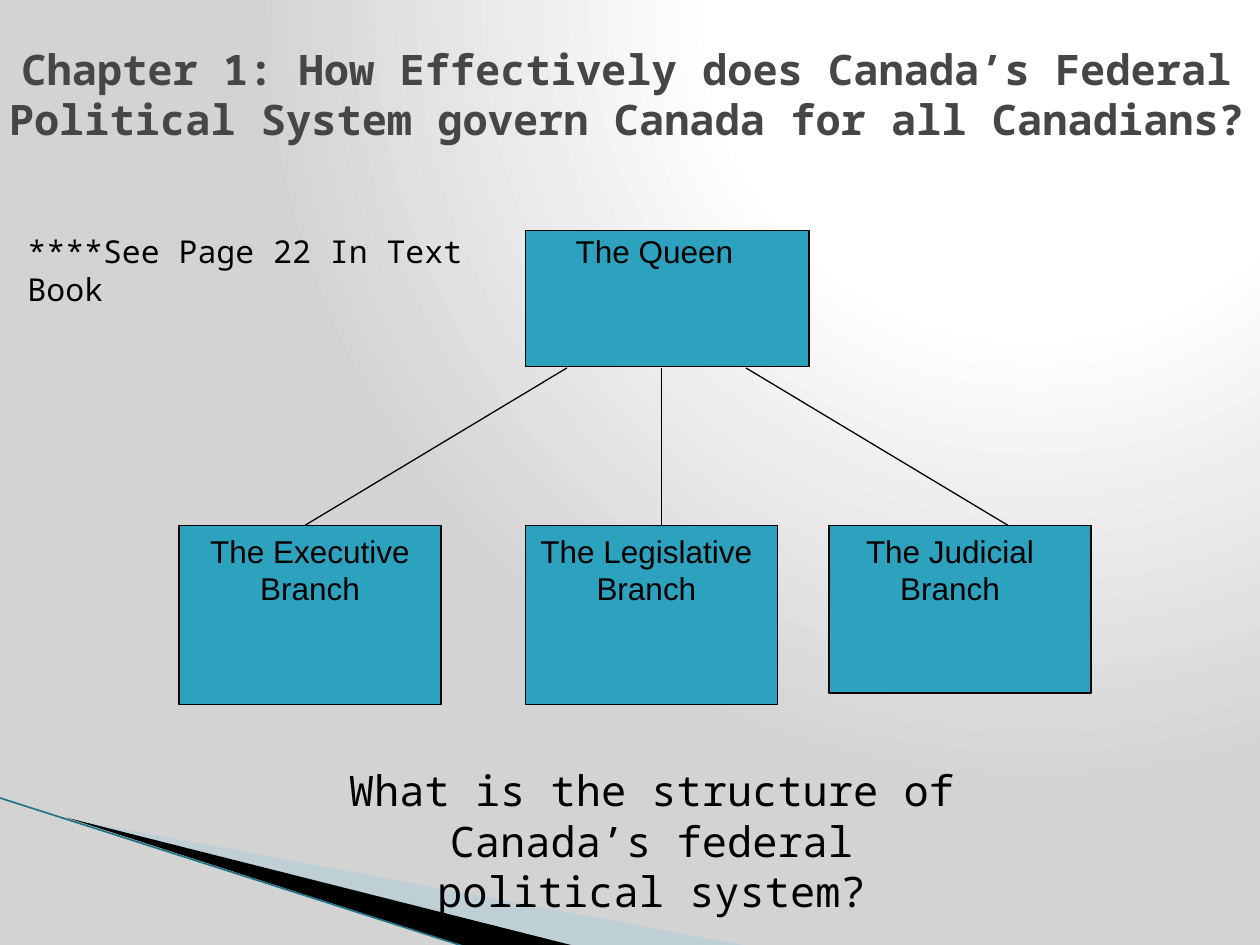
from lxml.etree import SubElement
from pptx import Presentation
from pptx.dml.color import RGBColor
from pptx.enum.shapes import MSO_CONNECTOR, MSO_SHAPE
from pptx.enum.text import MSO_ANCHOR, MSO_AUTO_SIZE, PP_ALIGN
from pptx.oxml import parse_xml
from pptx.oxml.ns import nsdecls, qn
from pptx.util import Inches, Pt

BLACK = RGBColor(0x00, 0x00, 0x00)
TEAL = RGBColor(0x2D, 0xA2, 0xBF)
DARK_TEAL = RGBColor(0x1F, 0x74, 0x88)
PALE_BLUE = RGBColor(0xA0, 0xCB, 0xDC)
TITLE_GREY = RGBColor(0x46, 0x46, 0x46)
MONO, SANS = "Noto Sans Mono", "Arial"

TITLE = ("Chapter 1: How Effectively does Canada’s Federal Political System "
         "govern Canada for all Canadians?")
TITLE_AREA = (-0.06, 0.36, 10.06, 0.77)

SWOOSHES = [
    ([(0.55, 6.5), (5.95, 7.51), (4.56, 7.51)], PALE_BLUE, 40),
    ([(0.53, 6.49), (4.57, 7.51), (3.72, 7.52)], BLACK, 100),
]
SWOOSH_EDGE = ((-0.01, 6.33), (3.71, 7.52))

BRANCH_LINES = [
    ((5.25, 2.92), (5.25, 4.25)),
    ((4.5, 2.92), (2.42, 4.17)),
    ((5.92, 2.92), (8, 4.17)),
]
OFFICE_BOXES = [
    (4.17, 1.83, 2.25, 1.08),
    (1.42, 4.17, 2.08, 1.42),
    (4.17, 4.17, 2, 1.42),
    (6.58, 4.17, 2.08, 1.33),
]
CAPTIONS = [
    ("The Queen", (4.47, 1.79, 1.79, 0.7), SANS, 18, PP_ALIGN.LEFT),
    ("The Executive Branch", (1.5, 4.17, 1.92, 1.15), SANS, 18, PP_ALIGN.CENTER),
    ("The Legislative Branch", (4.17, 4.17, 1.92, 0.7), SANS, 18, PP_ALIGN.CENTER),
    ("The Judicial Branch", (6.5, 4.17, 2.08, 1.15), SANS, 18, PP_ALIGN.CENTER),
    ("What is the structure of Canada’s federal political system?",
     (2.67, 6.02, 5, 1.31), MONO, 24, PP_ALIGN.CENTER),
    ("****See Page 22 In Text Book", (0.12, 1.79, 3.94, 0.7), MONO, 18, PP_ALIGN.LEFT),
]

BACKGROUND = f"""<p:bg {nsdecls('p', 'a')}><p:bgPr>
<a:gradFill rotWithShape="1"><a:gsLst>
<a:gs pos="0"><a:srgbClr val="FFFFFF"/></a:gs>
<a:gs pos="40000"><a:srgbClr val="FFFFFF"/></a:gs>
<a:gs pos="100000"><a:srgbClr val="D3D3D3"/></a:gs>
</a:gsLst><a:path path="circle">
<a:fillToRect l="65000" t="0" r="0" b="98000"/></a:path></a:gradFill>
<a:effectLst/></p:bgPr></p:bg>"""


def inches(values):
    return [Inches(value) for value in values]


def add_swoosh(slide, corners, color, opacity):
    start, *others = [inches(corner) for corner in corners]
    builder = slide.shapes.build_freeform(*start)
    builder.add_line_segments(others, close=True)
    swoosh = builder.convert_to_shape()
    swoosh.shadow.inherit = False
    swoosh.fill.solid()
    swoosh.fill.fore_color.rgb = color
    swoosh.line.fill.background()
    if opacity < 100:
        tint = swoosh.fill._xPr.find(qn("a:solidFill"))[0]
        SubElement(tint, qn("a:alpha")).set("val", str(opacity * 1000))


def add_line(slide, start, end, color, width):
    line = slide.shapes.add_connector(
        MSO_CONNECTOR.STRAIGHT, *inches(start), *inches(end))
    line.line.color.rgb = color
    line.line.width = Pt(width)
    SubElement(line._element.spPr, qn("a:effectLst"))


def add_box(slide, area):
    box = slide.shapes.add_shape(MSO_SHAPE.RECTANGLE, *inches(area))
    box.shadow.inherit = False
    box.fill.solid()
    box.fill.fore_color.rgb = TEAL
    box.line.color.rgb = BLACK
    box.line.width = Pt(0.75)


def write(frame, text, font_name, size, color, align, bold=False):
    frame.word_wrap = True
    paragraph = frame.paragraphs[0]
    paragraph.alignment = align
    run = paragraph.add_run()
    run.text = text
    run.font.name = font_name
    run.font.size = Pt(size)
    run.font.bold = bold
    run.font.color.rgb = color


def main():
    deck = Presentation()
    deck.slide_width, deck.slide_height = Inches(10), Inches(7.5)
    slide = deck.slides.add_slide(deck.slide_layouts[5])
    slide._element.cSld.insert(0, parse_xml(BACKGROUND))

    for corners, color, opacity in SWOOSHES:
        add_swoosh(slide, corners, color, opacity)
    add_line(slide, *SWOOSH_EDGE, DARK_TEAL, 0.95)

    title = slide.shapes.title
    title.left, title.top, title.width, title.height = inches(TITLE_AREA)
    title.text_frame.auto_size = MSO_AUTO_SIZE.NONE
    title.text_frame.vertical_anchor = MSO_ANCHOR.MIDDLE
    write(title.text_frame, TITLE, MONO, 24, TITLE_GREY, PP_ALIGN.CENTER, bold=True)

    for start, end in BRANCH_LINES:
        add_line(slide, start, end, BLACK, 0.75)
    for area in OFFICE_BOXES:
        add_box(slide, area)
    for text, area, font_name, size, align in CAPTIONS:
        caption = slide.shapes.add_textbox(*inches(area))
        write(caption.text_frame, text, font_name, size, BLACK, align)

    deck.save("out.pptx")


if __name__ == "__main__":
    main()
